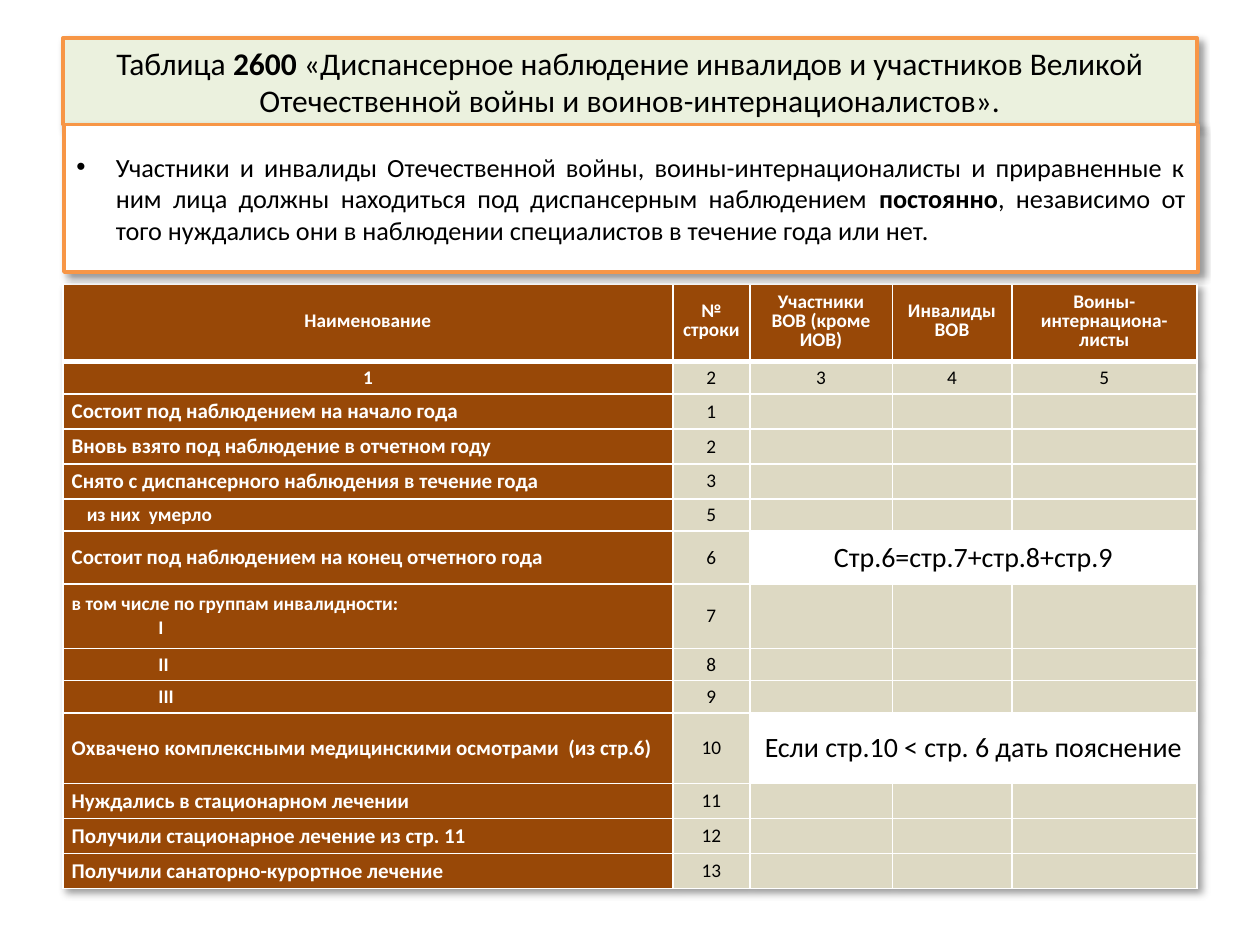
from lxml import etree
from pptx import Presentation
from pptx.dml.color import RGBColor
from pptx.enum.shapes import MSO_SHAPE
from pptx.enum.text import MSO_ANCHOR, PP_ALIGN
from pptx.oxml.ns import qn
from pptx.util import Pt

RECT = MSO_SHAPE.RECTANGLE
MIDDLE = MSO_ANCHOR.MIDDLE
LEFT, CENTER, JUST = PP_ALIGN.LEFT, PP_ALIGN.CENTER, PP_ALIGN.JUSTIFY

BLACK = RGBColor(0x00, 0x00, 0x00)
WHITE = RGBColor(0xFF, 0xFF, 0xFF)
GREEN = RGBColor(0xEB, 0xF1, 0xDE)
ORANGE = RGBColor(0xF7, 0x96, 0x46)
BROWN = RGBColor(0x98, 0x48, 0x07)
SAND = RGBColor(0xDD, 0xD9, 0xC3)
FACE = "Calibri"

TITLE = [("Таблица ", False), ("2600", True),
         (" «Диспансерное наблюдение инвалидов и участников Великой "
          "Отечественной войны и воинов-интернационалистов».", False)]
NOTE = [("Участники и инвалиды Отечественной войны, воины-интернационалисты "
         "и приравненные к ним лица должны находиться под диспансерным "
         "наблюдением ", False), ("постоянно", True),
        (", независимо от того нуждались они в наблюдении специалистов "
         "в течение года или нет.", False)]

COLS = [348.5, 44, 81.4, 68.3, 105.8]
HEAD = ["Наименование", "№ строки", "Участники ВОВ (кроме ИОВ)",
        "Инвалиды ВОВ", "Воины-интернациона-листы"]
HEAD_H, INDEX_H = 44.4, 18.4
MAIN = {"size": 12}
SUB = {"size": 11, "left": 8.6}
GROUP = {"size": 11, "left": 8.6, "first": 41}
CARE = {"size": 12, "align": JUST}

# Height, row number, label lines with their style, text over the last columns
ROWS = [
    (20, "1", [("Состоит под наблюдением на начало года", MAIN)], ""),
    (20, "2", [("Вновь взято под наблюдение в отчетном году", MAIN)], ""),
    (20, "3", [("Снято с диспансерного наблюдения в течение года", MAIN)], ""),
    (18.4, "5", [("из них  умерло", SUB)], ""),
    (30.3, "6", [("Состоит под наблюдением на конец отчетного года", MAIN)],
     "Стр.6=стр.7+стр.8+стр.9"),
    (36.8, "7", [("в том числе по группам инвалидности:", {"size": 11}),
                 ("I", GROUP)], ""),
    (18.4, "8", [("II", GROUP)], ""),
    (18.4, "9", [("III", GROUP)], ""),
    (40.4, "10", [("Охвачено комплексными медицинскими осмотрами  (из стр.6)",
                   MAIN)], "Если стр.10 < стр. 6 дать пояснение"),
    (20, "11", [("Нуждались в стационарном лечении", CARE)], ""),
    (20, "12", [("Получили стационарное лечение из стр. 11", CARE)], ""),
    (20, "13", [("Получили санаторно-курортное лечение", CARE)], ""),
]


def apply(item, form):
    for name, value in form.items():
        setattr(item, name, value)


def add(parent, tag, **attrs):
    return etree.SubElement(parent, qn(tag), attrs)


def shade(parent):
    """Soft shadow towards the lower right."""
    glow = add(add(parent, "a:effectLst"), "a:outerShdw", blurRad="50800",
               dist="38100", dir="2700000", algn="tl", rotWithShape="0")
    tone = add(glow, "a:srgbClr", val=str(BLACK))
    add(tone, "a:alpha", val="40000")


def write(para, runs, size, color):
    for text, bold in runs:
        run = para.add_run()
        run.text = text
        apply(run.font, {"name": FACE, "size": Pt(size), "bold": bold})
        run.font.color.rgb = color


def indent(para, left, first):
    props = para._p.get_or_add_pPr()
    props.set("marL", str(Pt(left)))
    props.set("indent", str(Pt(first)))
    return props


def panel(slide, box, fill, runs, size, align):
    """Framed box with one paragraph."""
    shape = slide.shapes.add_shape(RECT, *map(Pt, box))
    shape.fill.solid()
    shape.fill.fore_color.rgb = fill
    shape.line.color.rgb = ORANGE
    shape.line.width = Pt(2)
    shade(shape._element.spPr)
    apply(shape.text_frame, {"word_wrap": True, "vertical_anchor": MIDDLE})
    para = shape.text_frame.paragraphs[0]
    para.alignment = align
    write(para, runs, size, BLACK)
    return para


def note(slide, box):
    para = panel(slide, box, WHITE, NOTE, 15, JUST)
    para.space_after = Pt(6)
    props = indent(para, 22.5, -22.5)
    add(props, "a:buFont", typeface="Arial")
    add(props, "a:buChar", char="•")


def dress(cell, fill, base=1):
    """White borders, fill and margins of a cell."""
    props = cell._tc.get_or_add_tcPr()
    for side, width in zip("LRTB", (1, 1, 1, base)):
        line = add(props, f"a:ln{side}", w=str(Pt(width)))
        add(add(line, "a:solidFill"), "a:srgbClr", val=str(WHITE))
    cell.fill.solid()
    cell.fill.fore_color.rgb = fill
    apply(cell, {"margin_left": Pt(5), "margin_right": Pt(5), "margin_top": 0,
                 "margin_bottom": 0, "vertical_anchor": MIDDLE})


def fill_in(cell, text, size=11, color=BLACK, bold=False):
    para = cell.text_frame.paragraphs[0]
    para.alignment = CENTER
    if text:
        write(para, [(text, bold)], size, color)
    else:
        add(para._p, "a:endParaRPr", sz=str(size * 100))
    return para


def label(cell, lines):
    frame = cell.text_frame
    for i, (text, style) in enumerate(lines):
        para = frame.add_paragraph() if i else frame.paragraphs[0]
        para.alignment = style.get("align", LEFT)
        indent(para, style.get("left", 0), style.get("first", 0))
        write(para, [(text, True)], style["size"], WHITE)


def grid(slide, box):
    """Table of observed groups."""
    frame = slide.shapes.add_table(len(ROWS) + 2, len(COLS), *map(Pt, box))
    table = frame.table
    shade(table._tbl.tblPr)
    # The shadow must stand before the style id
    style = table._tbl.tblPr.find(qn("a:tableStyleId"))
    if style is not None:
        table._tbl.tblPr.remove(style)
    for col, width in zip(table.columns, COLS):
        col.width = Pt(width)
    tall = [HEAD_H, INDEX_H] + [row[0] for row in ROWS]
    for row, height in zip(table.rows, tall):
        row.height = Pt(height)

    # Header and column numbers
    for c, text in enumerate(HEAD):
        cell = table.cell(0, c)
        dress(cell, BROWN, 3)
        para = fill_in(cell, text, color=WHITE, bold=True)
        apply(para, {"line_spacing": Pt(11), "space_after": Pt(6)})
        cell = table.cell(1, c)
        dress(cell, SAND if c else BROWN)
        fill_in(cell, str(c + 1), color=BLACK if c else WHITE, bold=not c)

    # Body
    for r, (_, number, lines, remark) in enumerate(ROWS, 2):
        dress(table.cell(r, 0), BROWN)
        label(table.cell(r, 0), lines)
        dress(table.cell(r, 1), SAND)
        fill_in(table.cell(r, 1), number)
        for c in range(2, len(COLS)):
            dress(table.cell(r, c), WHITE if remark else SAND)
            fill_in(table.cell(r, c), remark if c == 2 else "",
                    16 if remark and c == 2 else 11)
        if remark:
            table.cell(r, 2).merge(table.cell(r, len(COLS) - 1))


def main():
    deck = Presentation()
    apply(deck, {"slide_width": Pt(720), "slide_height": Pt(540)})
    slide = deck.slides.add_slide(deck.slide_layouts[6])
    panel(slide, (36, 21.6, 648, 49.7), GREEN, TITLE, 18, CENTER)
    grid(slide, (36, 162.3, 648, 345.5))
    note(slide, (36.6, 71.3, 648, 84.2))
    deck.save("out.pptx")


if __name__ == "__main__":
    main()
